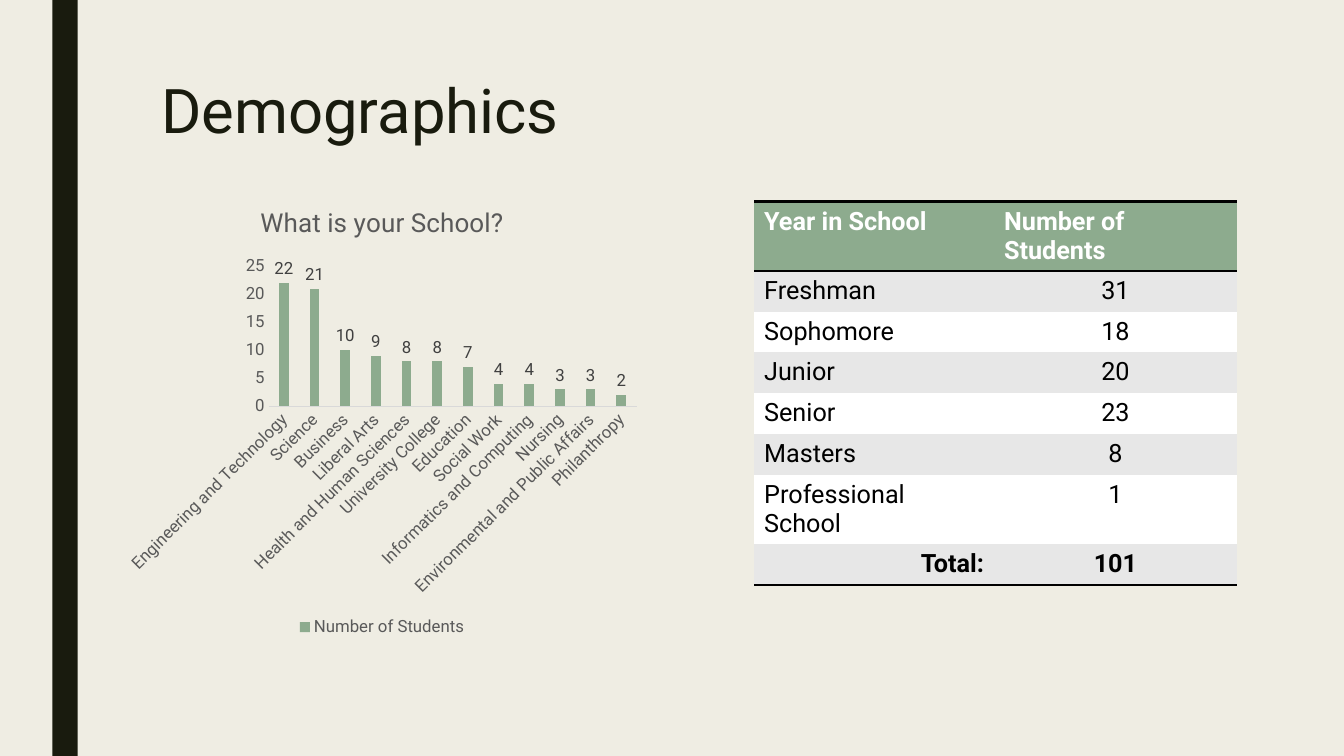
from dataclasses import dataclass

from lxml import etree
from pptx import Presentation, util as u
from pptx.chart.data import CategoryChartData
from pptx.dml.color import RGBColor
from pptx.enum import chart as ch, shapes, text
from pptx.oxml.ns import qn

INK = RGBColor(0x19, 0x1B, 0x0E)
CREAM = RGBColor(0xEF, 0xED, 0xE3)
GREEN = RGBColor(0x8D, 0xAB, 0x8E)
GREY = RGBColor(0x59, 0x59, 0x59)
DARK = RGBColor(0x40, 0x40, 0x40)
RULE = RGBColor(0xD9, 0xD9, 0xD9)
BAND = RGBColor(0xE7, 0xE7, 0xE7)
WHITE = RGBColor(0xFF, 0xFF, 0xFF)
BLACK = RGBColor(0, 0, 0)
FACE = "Roboto"
PLAIN = "{2D5ABB26-0587-4C30-8999-92F81FD0307C}"
LEFT, MID, RIGHT = text.PP_ALIGN.LEFT, text.PP_ALIGN.CENTER, text.PP_ALIGN.RIGHT
WIDE, HIGH = u.Inches(13.33), u.Inches(7.5)


@dataclass
class Box:
    """A place in percent of the slide's width and height."""
    x: float
    y: float
    w: float
    h: float

    def emu(self) -> tuple:
        return (across(self.x), down(self.y), across(self.w), down(self.h))


@dataclass
class Row:
    label: str
    count: str
    fill: RGBColor
    ink: RGBColor = BLACK
    bold: bool = False
    aligns: tuple = (LEFT, MID)
    edges: tuple = ()


def across(share: float) -> int:
    return round(WIDE * share / 100)


def down(share: float) -> int:
    return round(HIGH * share / 100)


BAR = Box(3.9, 0, 1.88, 100)
TITLE = Box(11.25, 10, 78.77, 21.6)
CHART = Box(8.7, 24.67, 39.46, 60.13)
TABLE = Box(56.11, 26.67, 35.92, 43.2)
COLS = (17.85, 18.07)

SCHOOLS = {
    "Engineering and Technology": 22, "Science": 21, "Business": 10,
    "Liberal Arts": 9, "Health and Human Sciences": 8,
    "University College": 8, "Education": 7, "Social Work": 4,
    "Informatics and Computing": 4, "Nursing": 3,
    "Environmental and Public Affairs": 3, "Philanthropy": 2,
}
YEARS = {"Freshman": 31, "Sophomore": 18, "Junior": 20, "Senior": 23,
         "Masters": 8, "Professional School": 1}


def style(font, size: float, ink: RGBColor, bold: bool = False) -> None:
    font.name, font.size, font.bold = FACE, u.Pt(size), bold
    font.color.rgb = ink


def write(frame, words: str, *, size: float, ink: RGBColor,
          bold: bool = False, align=LEFT, space: float = 1.0) -> None:
    para = frame.paragraphs[0]
    para.alignment, para.line_spacing = align, space
    run = para.add_run()
    run.text = words
    style(run.font, size, ink, bold)


def edge(cell, side: str) -> None:
    """Rule one side of a cell; called before the fill is set."""
    line = etree.SubElement(cell._tc.get_or_add_tcPr(), qn("a:" + side),
                            w=str(u.Pt(2)))
    fill = etree.SubElement(line, qn("a:solidFill"))
    etree.SubElement(fill, qn("a:srgbClr"), val=str(BLACK))


def add_bar(slide) -> None:
    bar = slide.shapes.add_shape(shapes.MSO_SHAPE.RECTANGLE, *BAR.emu())
    bar.shadow.inherit = False
    bar.fill.solid()
    bar.fill.fore_color.rgb = INK
    bar.line.fill.background()


def add_title(slide) -> None:
    title = slide.shapes.title
    title.left, title.top, title.width, title.height = TITLE.emu()
    frame = title.text_frame
    frame.vertical_anchor = text.MSO_ANCHOR.TOP
    frame.auto_size = text.MSO_AUTO_SIZE.NONE
    write(frame, "Demographics", size=44, ink=INK, space=0.89)


def add_chart(slide) -> None:
    data = CategoryChartData()
    data.categories = list(SCHOOLS)
    data.add_series("Number of Students", list(SCHOOLS.values()))
    chart = slide.shapes.add_chart(
        ch.XL_CHART_TYPE.COLUMN_CLUSTERED, *CHART.emu(), data).chart
    style(chart.font, 10, BLACK)
    chart.has_title = True
    write(chart.chart_title.text_frame, "What is your School?",
          size=18.6, ink=GREY, align=MID)
    chart.chart_title.include_in_layout = False

    # Legend
    chart.has_legend = True
    chart.legend.position = ch.XL_LEGEND_POSITION.BOTTOM
    chart.legend.include_in_layout = False
    style(chart.legend.font, 12, GREY)

    # Axes
    for axis in (chart.category_axis, chart.value_axis):
        axis.has_major_gridlines = False
        axis.major_tick_mark = axis.minor_tick_mark = ch.XL_TICK_MARK.NONE
        style(axis.tick_labels.font, 12, GREY)
    chart.value_axis.format.line.fill.background()
    chart.value_axis.minimum_scale = 0
    chart.value_axis.maximum_scale = 25
    chart.value_axis.major_unit = 5
    names = chart.category_axis
    names.format.line.color.rgb = RULE
    names.format.line.width = u.Pt(0.75)
    body = next(names.tick_labels.font._element.getparent()
                .getparent().getparent().iter(qn("a:bodyPr")))
    body.set("rot", "-2700000")
    body.set("vert", "horz")

    # Columns and their values
    plot = chart.plots[0]
    plot.gap_width, plot.overlap, plot.vary_by_categories = 219, -27, False
    fill = plot.series[0].format.fill
    fill.solid()
    fill.fore_color.rgb = GREEN
    marks = plot.series[0].data_labels
    marks.show_value = True
    marks.position = ch.XL_LABEL_POSITION.OUTSIDE_END
    style(marks.font, 12, DARK)


def add_table(slide) -> None:
    rows = [Row("Year in School", "Number of Students", GREEN, WHITE, True,
                (LEFT, LEFT), ("lnT", "lnB"))]
    rows += [Row(year, str(count), WHITE if i % 2 else BAND)
             for i, (year, count) in enumerate(YEARS.items())]
    rows.append(Row("Total:", str(sum(YEARS.values())), BAND, bold=True,
                    aligns=(RIGHT, MID), edges=("lnB",)))

    frame = slide.shapes.add_table(len(rows), len(COLS), *TABLE.emu())
    next(frame.element.iter(qn("a:tableStyleId"))).text = PLAIN
    table = frame.table
    for col, share in zip(table.columns, COLS):
        col.width = across(share)
    for r, row in enumerate(rows):
        for c, words in enumerate((row.label, row.count)):
            cell = table.cell(r, c)
            for side in row.edges:
                edge(cell, side)
            cell.fill.solid()
            cell.fill.fore_color.rgb = row.fill
            write(cell.text_frame, words, size=18, ink=row.ink,
                  bold=row.bold, align=row.aligns[c])


def main() -> None:
    deck = Presentation()
    deck.slide_width, deck.slide_height = WIDE, HIGH
    slide = deck.slides.add_slide(deck.slide_layouts[5])
    slide.background.fill.solid()
    slide.background.fill.fore_color.rgb = CREAM
    add_bar(slide)
    add_title(slide)
    add_chart(slide)
    add_table(slide)
    deck.save("out.pptx")


if __name__ == "__main__":
    main()
